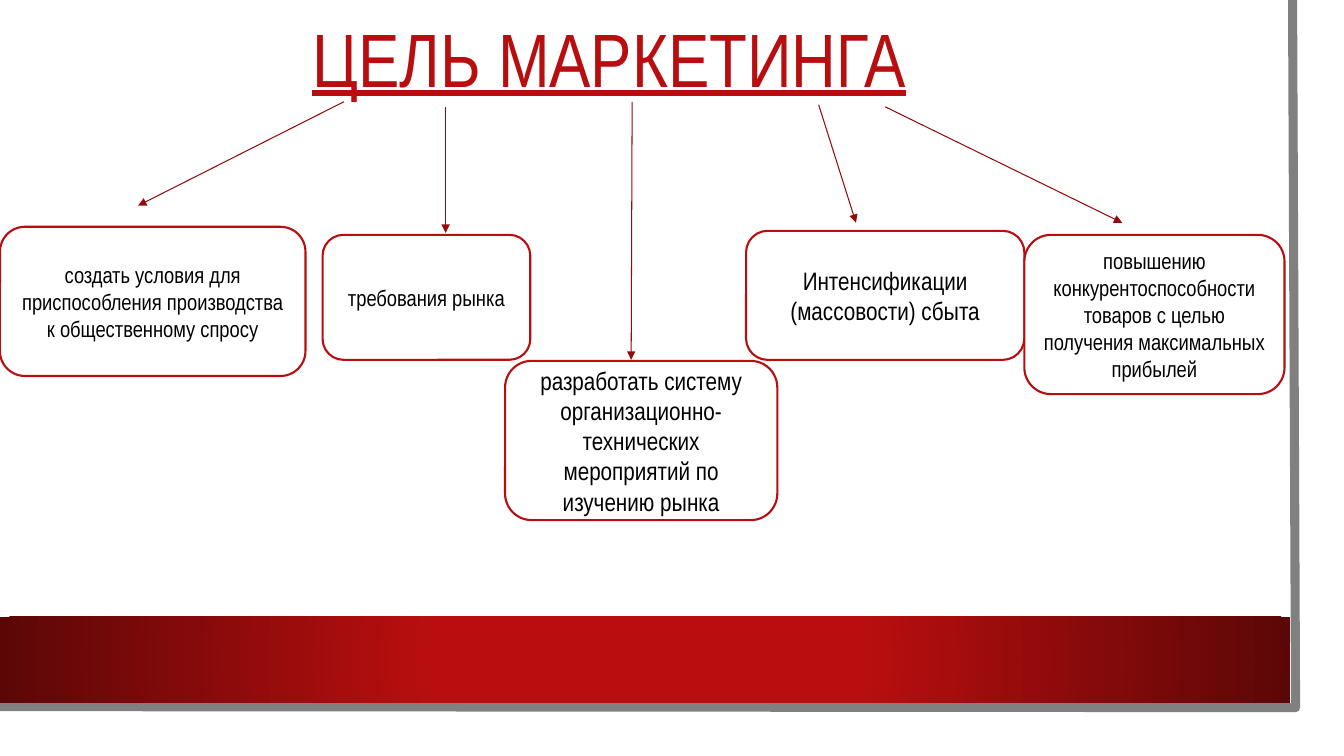
from dataclasses import dataclass

from lxml import etree
from pptx import Presentation
from pptx.dml.color import RGBColor
from pptx.enum.shapes import MSO_CONNECTOR, MSO_SHAPE
from pptx.enum.text import MSO_ANCHOR, PP_ALIGN
from pptx.oxml import parse_xml
from pptx.oxml.ns import nsdecls, qn
from pptx.util import Pt

EMU_PER_PX = 9144  # 100 px to the inch
SLIDE_SIZE = (1333, 750)
STRAIGHT = MSO_CONNECTOR.STRAIGHT
RECTANGLE, ROUNDED = MSO_SHAPE.RECTANGLE, MSO_SHAPE.ROUNDED_RECTANGLE
CENTER, MIDDLE = PP_ALIGN.CENTER, MSO_ANCHOR.MIDDLE


@dataclass(frozen=True)
class Theme:
    font: str = "Arial Narrow"
    red: str = "B80E0F"
    dark_red: str = "5C0707"
    arrow: str = "930B0C"
    frame: str = "808080"
    white: str = "FFFFFF"
    black: str = "000000"
    title_size: int = 54
    large_size: int = 18
    small_size: int = 16


THEME = Theme()

# box (left, top, width, height), text, type size
GOALS = [
    ((0, 225, 303, 148),
     "создать условия для приспособления производства к общественному спросу",
     THEME.small_size),
    ((320, 233, 206, 124), "требования рынка", THEME.small_size),
    ((501, 358, 270, 158),
     "разработать систему организационно-технических мероприятий по изучению рынка",
     THEME.large_size),
    ((740, 229, 276, 128), "Интенсификации\n(массовости) сбыта", THEME.large_size),
    ((1016, 233, 258, 158),
     "повышению конкурентоспособности товаров с целью получения максимальных прибылей",
     THEME.small_size),
]

# start and end of each arrow, in the order of the goals
ARROWS = [
    ((341, 101), (137, 204)),
    ((442, 106), (442, 231)),
    ((627, 101), (626, 357)),
    ((812, 104), (849, 221)),
    ((878, 106), (1113, 221)),
]


def px(*lengths):
    return [length * EMU_PER_PX for length in lengths]


def color(value):
    return RGBColor.from_string(value)


def set_line(line, value, width):
    line.color.rgb = color(value)
    line.width = Pt(width)


def write_text(shape, text, size, value):
    frame = shape.text_frame
    frame.word_wrap = True
    frame.vertical_anchor = MIDDLE
    frame.text = text
    for paragraph in frame.paragraphs:
        paragraph.alignment = CENTER
        for run in paragraph.runs:
            run.font.name = THEME.font
            run.font.size = Pt(size)
            run.font.color.rgb = color(value)


def add_frame(slide, right, bottom):
    """Draw the grey edge along the right and bottom of the sheet."""
    builder = slide.shapes.build_freeform(right - 3, 0, scale=EMU_PER_PX)
    builder.add_line_segments([(right, bottom), (0, bottom - 1)], close=False)
    edge = builder.convert_to_shape()
    edge.shadow.inherit = False
    edge.fill.background()
    set_line(edge.line, THEME.frame, 6.5)


def add_band(slide, box):
    """Draw the bottom band, red in the centre and darker outwards."""
    band = slide.shapes.add_shape(RECTANGLE, *px(*box))
    band.shadow.inherit = False
    band.line.fill.background()
    gradient = parse_xml(
        f'<a:gradFill {nsdecls("a")} rotWithShape="1"><a:gsLst>'
        f'<a:gs pos="34000"><a:srgbClr val="{THEME.red}"/></a:gs>'
        f'<a:gs pos="100000"><a:srgbClr val="{THEME.dark_red}"/></a:gs></a:gsLst>'
        '<a:path path="circle">'
        '<a:fillToRect l="50000" t="50000" r="50000" b="50000"/>'
        '</a:path></a:gradFill>')
    band.element.spPr.find(qn("a:prstGeom")).addnext(gradient)


def add_title(slide, box, text):
    title = slide.shapes.add_textbox(*px(*box))
    write_text(title, text, THEME.title_size, THEME.red)
    paragraph = title.text_frame.paragraphs[0]
    paragraph.line_spacing = 0.9
    paragraph.runs[0].font.underline = True


def add_arrow(slide, start, end):
    arrow = slide.shapes.add_connector(STRAIGHT, *px(*start, *end))
    set_line(arrow.line, THEME.arrow, 0.75)
    line = arrow.line._get_or_add_ln()
    etree.SubElement(line, qn("a:tailEnd"), type="triangle")
    etree.SubElement(arrow.element.spPr, qn("a:effectLst"))


def add_goal(slide, box, text, size):
    goal = slide.shapes.add_shape(ROUNDED, *px(*box))
    goal.shadow.inherit = False
    goal.fill.solid()
    goal.fill.fore_color.rgb = color(THEME.white)
    set_line(goal.line, THEME.red, 1.5)
    write_text(goal, text, size, THEME.black)


def main():
    presentation = Presentation()
    presentation.slide_width, presentation.slide_height = px(*SLIDE_SIZE)
    slide = presentation.slides.add_slide(presentation.slide_layouts[6])
    add_frame(slide, 1285, 702)
    add_band(slide, (0, 612, 1280, 85))
    add_title(slide, (36, 16, 1137, 93), "ЦЕЛЬ МАРКЕТИНГА")
    for start, end in ARROWS:
        add_arrow(slide, start, end)
    for box, text, size in GOALS:
        add_goal(slide, box, text, size)
    presentation.save("out.pptx")


if __name__ == "__main__":
    main()
